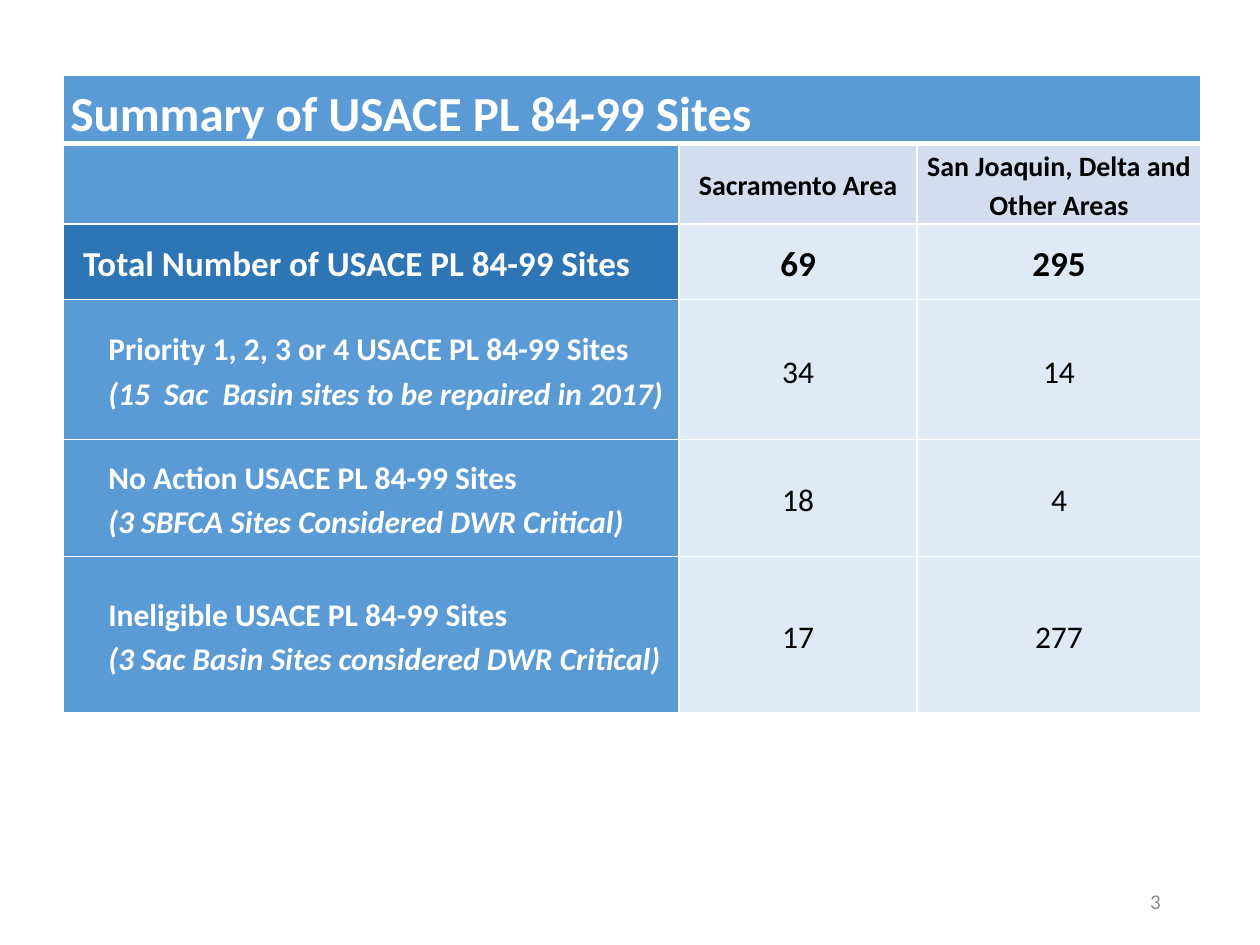
import pptx
import pptx.util
import pptx.dml.color
import pptx.enum.text
import pptx.oxml.ns
import lxml.etree

Inches, Pt = pptx.util.Inches, pptx.util.Pt
RGBColor = pptx.dml.color.RGBColor
PP_ALIGN = pptx.enum.text.PP_ALIGN
MIDDLE = pptx.enum.text.MSO_ANCHOR.MIDDLE
qn = pptx.oxml.ns.qn

WHITE = RGBColor(0xFF, 0xFF, 0xFF)
BLACK = RGBColor(0x00, 0x00, 0x00)
GRAY = RGBColor(0x8C, 0x8C, 0x8C)
BLUE = RGBColor(0x5B, 0x9B, 0xD5)
DARK_BLUE = RGBColor(0x2E, 0x75, 0xB6)
AREA_BLUE = RGBColor(0xD2, 0xDE, 0xEF)
PALE_BLUE = RGBColor(0xDE, 0xEB, 0xF7)
FONT = "Calibri"

TITLE = "Summary of USACE PL 84-99 Sites"
AREAS = ["Sacramento Area", "San Joaquin, Delta and Other Areas"]
TOTAL = ("Total Number of USACE PL 84-99 Sites", ["69", "295"])
CATEGORIES = [
    ("Priority 1, 2, 3 or 4 USACE PL 84-99 Sites\n"
     "(15  Sac  Basin sites to be repaired in 2017)", ["34", "14"]),
    ("No Action USACE PL 84-99 Sites\n"
     "(3 SBFCA Sites Considered DWR Critical)", ["18", "4"]),
    ("Ineligible USACE PL 84-99 Sites\n"
     "(3 Sac Basin Sites considered DWR Critical)", ["17", "277"]),
]
COLUMN_WIDTHS = [4.89, 1.89, 2.25]
ROW_HEIGHTS = [0.53, 0.64, 0.6, 1.11, 0.93, 1.24]


def set_borders(cell, top=1, bottom=1):
    properties = cell._tc.get_or_add_tcPr()
    for side, width in (("L", 1), ("R", 1), ("T", top), ("B", bottom)):
        line = lxml.etree.SubElement(properties, qn(f"a:ln{side}"), w=str(Pt(width)))
        fill = lxml.etree.SubElement(line, qn("a:solidFill"))
        lxml.etree.SubElement(fill, qn("a:srgbClr"), val=str(WHITE))


def style_font(font, size, color, bold=False, italic=False):
    font.name, font.size, font.bold, font.italic = FONT, Pt(size), bold, italic
    font.color.rgb = color


def fill_cell(cell, text, fill, size, color=WHITE, bold=True,
              align=PP_ALIGN.LEFT, indent=0):
    """Any line after the first is a remark in italics."""
    cell.fill.solid()
    cell.fill.fore_color.rgb = fill
    cell.vertical_anchor = MIDDLE
    cell.margin_left = cell.margin_right = Inches(0.06)
    cell.margin_top = cell.margin_bottom = 0
    cell.text_frame.text = text
    for number, paragraph in enumerate(cell.text_frame.paragraphs):
        paragraph.alignment = align
        paragraph.line_spacing = 1.15
        if indent:
            paragraph._p.get_or_add_pPr().set("marL", str(Inches(indent)))
        style_font(paragraph.font, size, color, bold)
        for run in paragraph.runs:
            style_font(run.font, size, color, bold, italic=number > 0)


def fill_row(cells, label, values, label_fill, value_fill, size, bold, indent=0):
    label_cell, *value_cells = cells
    fill_cell(label_cell, label, label_fill, size, indent=indent)
    for cell, value in zip(value_cells, values):
        fill_cell(cell, value, value_fill, size, BLACK, bold, PP_ALIGN.CENTER)


def add_sites_table(slide, left, top):
    table = slide.shapes.add_table(
        len(ROW_HEIGHTS), len(COLUMN_WIDTHS), Inches(left), Inches(top),
        Inches(sum(COLUMN_WIDTHS)), Inches(sum(ROW_HEIGHTS))).table
    table.horz_banding = table.first_row = False
    for column, width in zip(table.columns, COLUMN_WIDTHS):
        column.width = Inches(width)
    for number, (row, height) in enumerate(zip(table.rows, ROW_HEIGHTS)):
        row.height = Inches(height)
        for cell in row.cells:
            set_borders(cell, top=3 if number == 1 else 1,
                        bottom=3 if number == 0 else 1)

    title_cells, area_cells, total_cells, *category_rows = [
        list(row.cells) for row in table.rows]
    title_cells[0].merge(title_cells[-1])
    fill_cell(title_cells[0], TITLE, BLUE, 28)
    fill_row(area_cells, "", AREAS, BLUE, AREA_BLUE, 16, True)
    fill_row(total_cells, *TOTAL, DARK_BLUE, PALE_BLUE, 20, True, 0.1)
    for cells, category in zip(category_rows, CATEGORIES):
        fill_row(cells, *category, BLUE, PALE_BLUE, 18, False, 0.3)


def add_page_number(slide, left, top, width, height):
    frame = slide.shapes.add_textbox(
        Inches(left), Inches(top), Inches(width), Inches(height)).text_frame
    frame.word_wrap = True
    frame.vertical_anchor = MIDDLE
    frame.text = "3"
    frame.paragraphs[0].alignment = PP_ALIGN.RIGHT
    style_font(frame.paragraphs[0].runs[0].font, 12, GRAY)


def main():
    presentation = pptx.Presentation()
    presentation.slide_width, presentation.slide_height = Inches(10), Inches(7.5)
    slide = presentation.slides.add_slide(presentation.slide_layouts[6])
    add_page_number(slide, 7.06, 6.95, 2.25, 0.4)
    add_sites_table(slide, 0.5, 0.6)
    presentation.save("out.pptx")


if __name__ == "__main__":
    main()
